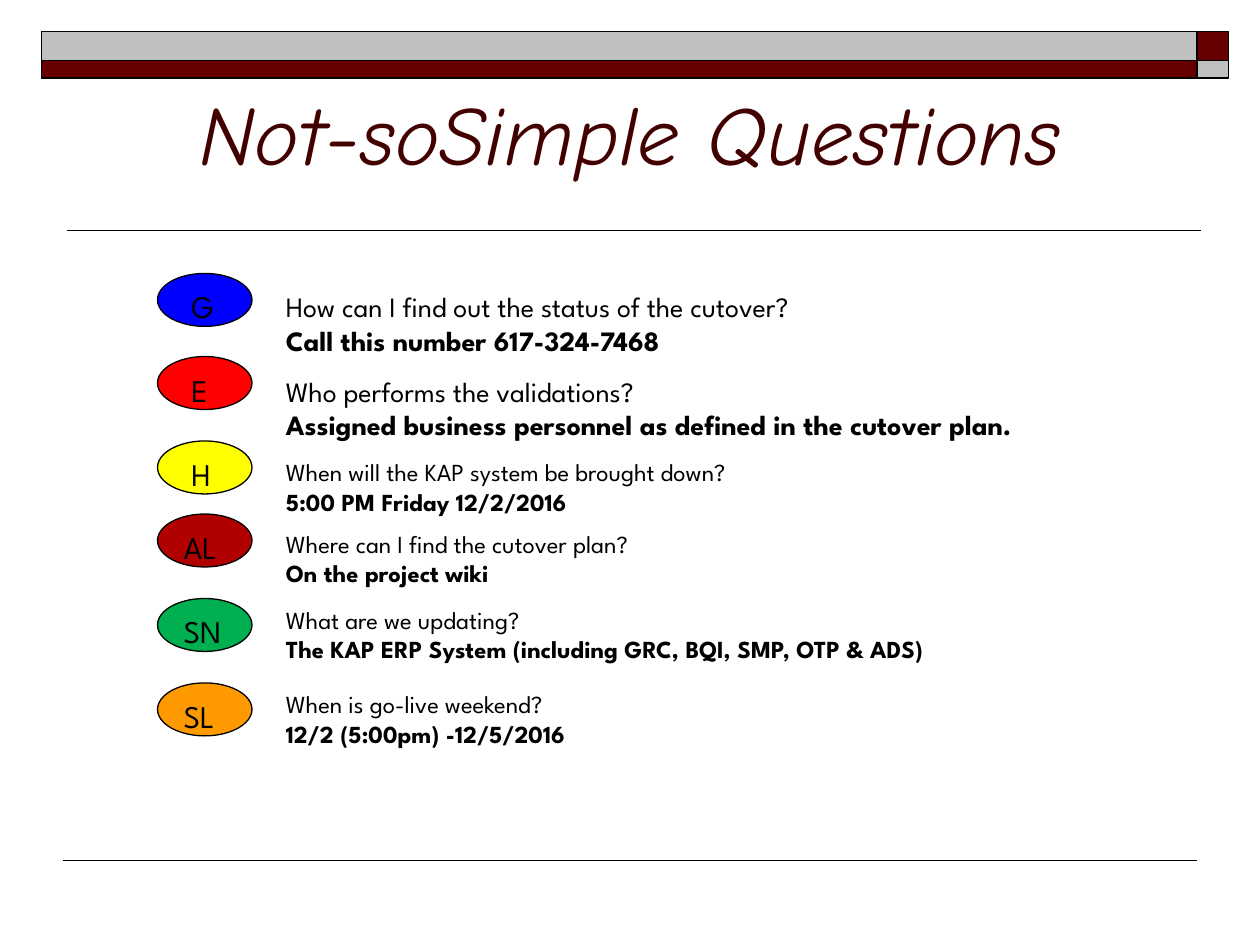
from dataclasses import dataclass

from lxml import etree
from pptx import Presentation
from pptx import util as u
from pptx.dml.color import RGBColor
from pptx.enum import shapes, text
from pptx.oxml import ns


@dataclass(frozen=True)
class Theme:
    title_font: str = "Comic Neue"
    body_font: str = "League Spartan"
    title_color: str = "420000"
    ink: str = "000000"
    maroon: str = "660000"
    silver: str = "C0C0C0"
    title_size: int = 48
    badge_size: int = 18
    large_size: int = 16
    small_size: int = 14
    thick: float = 1
    thin: float = 0.75


theme = Theme()
presentation = Presentation()
presentation.slide_width = u.Inches(10)
presentation.slide_height = u.Inches(7.5)
slide = presentation.slides.add_slide(presentation.slide_layouts[6])


def add_filled(kind, left, top, width, height, fill, line_width):
    shape = slide.shapes.add_shape(
        kind, u.Inches(left), u.Inches(top), u.Inches(width), u.Inches(height))
    shape.shadow.inherit = False
    shape.fill.solid()
    shape.fill.fore_color.rgb = RGBColor.from_string(fill)
    shape.line.color.rgb = RGBColor.from_string(theme.ink)
    shape.line.width = u.Pt(line_width)
    return shape


def add_run(paragraph, words, size, font=theme.body_font, color=theme.ink, bold=False, italic=False):
    run = paragraph.add_run()
    run.text = words
    run.font.name = font
    run.font.size = u.Pt(size)
    run.font.bold = bold
    run.font.italic = italic
    run.font.color.rgb = RGBColor.from_string(color)


for left, top, line_width in [(0.53, 1.83, theme.thick), (0.5, 6.83, theme.thin)]:
    rule = slide.shapes.add_connector(
        shapes.MSO_CONNECTOR.STRAIGHT,
        u.Inches(left), u.Inches(top), u.Inches(left + 9), u.Inches(top))
    rule.line.color.rgb = RGBColor.from_string(theme.ink)
    rule.line.width = u.Pt(line_width)
    etree.SubElement(rule._element.spPr, ns.qn("a:effectLst"))

for top, height, bar_color, corner_color in [
    (0.25, 0.23, theme.silver, theme.maroon),
    (0.48, 0.14, theme.maroon, theme.silver),
]:
    for left, width, fill in [(0.33, 9.17, bar_color), (9.5, 0.25, corner_color)]:
        add_filled(shapes.MSO_SHAPE.RECTANGLE, left, top, width, height, fill, theme.thick)

title = slide.shapes.add_textbox(u.Inches(0.5), u.Inches(0.25), u.Inches(9), u.Inches(1.25))
title.text_frame.word_wrap = True
title.text_frame.vertical_anchor = text.MSO_ANCHOR.BOTTOM
paragraph = title.text_frame.paragraphs[0]
paragraph.alignment = text.PP_ALIGN.CENTER
add_run(paragraph, "Not-soSimple Questions", theme.title_size,
        theme.title_font, theme.title_color, italic=True)

questions = [
    ("G", "0000FF", 2.17, 2.25, theme.large_size,
     "How can I find out the status of the cutover?", "Call this number 617-324-7468"),
    ("E", "FF0000", 2.83, 2.92, theme.large_size,
     "Who performs the validations?",
     "Assigned business personnel as defined in the cutover plan."),
    ("H", "FFFF00", 3.5, 3.58, theme.small_size,
     "When will the KAP system be brought down?", "5:00 PM Friday 12/2/2016"),
    ("AL", "B10000", 4.08, 4.15, theme.small_size,
     "Where can I find the cutover plan?", "On the project wiki"),
    ("SN", "00B050", 4.75, 4.75, theme.small_size,
     "What are we updating?", "The KAP ERP System (including GRC, BQI, SMP, OTP & ADS)"),
    ("SL", "FF9900", 5.42, 5.42, theme.small_size,
     "When is go-live weekend?", "12/2 (5:00pm) -12/5/2016"),
]

for category, fill, badge_top, text_top, size, question, answer in questions:
    badge = add_filled(shapes.MSO_SHAPE.OVAL, 1.25, badge_top, 0.75, 0.42, fill, theme.thin)
    frame = badge.text_frame
    frame.word_wrap = True
    frame.vertical_anchor = text.MSO_ANCHOR.TOP
    frame.margin_left = u.Inches(0.16 if len(category) == 1 else 0.1)
    frame.paragraphs[0].alignment = text.PP_ALIGN.LEFT
    add_run(frame.paragraphs[0], category, theme.badge_size)

    height = 0.64 if size == theme.large_size else 0.57
    box = slide.shapes.add_textbox(
        u.Inches(2.17), u.Inches(text_top), u.Inches(7.33), u.Inches(height))
    frame = box.text_frame
    frame.word_wrap = True
    add_run(frame.paragraphs[0], question, size)
    add_run(frame.add_paragraph(), answer, size, bold=True)

presentation.save("out.pptx")
